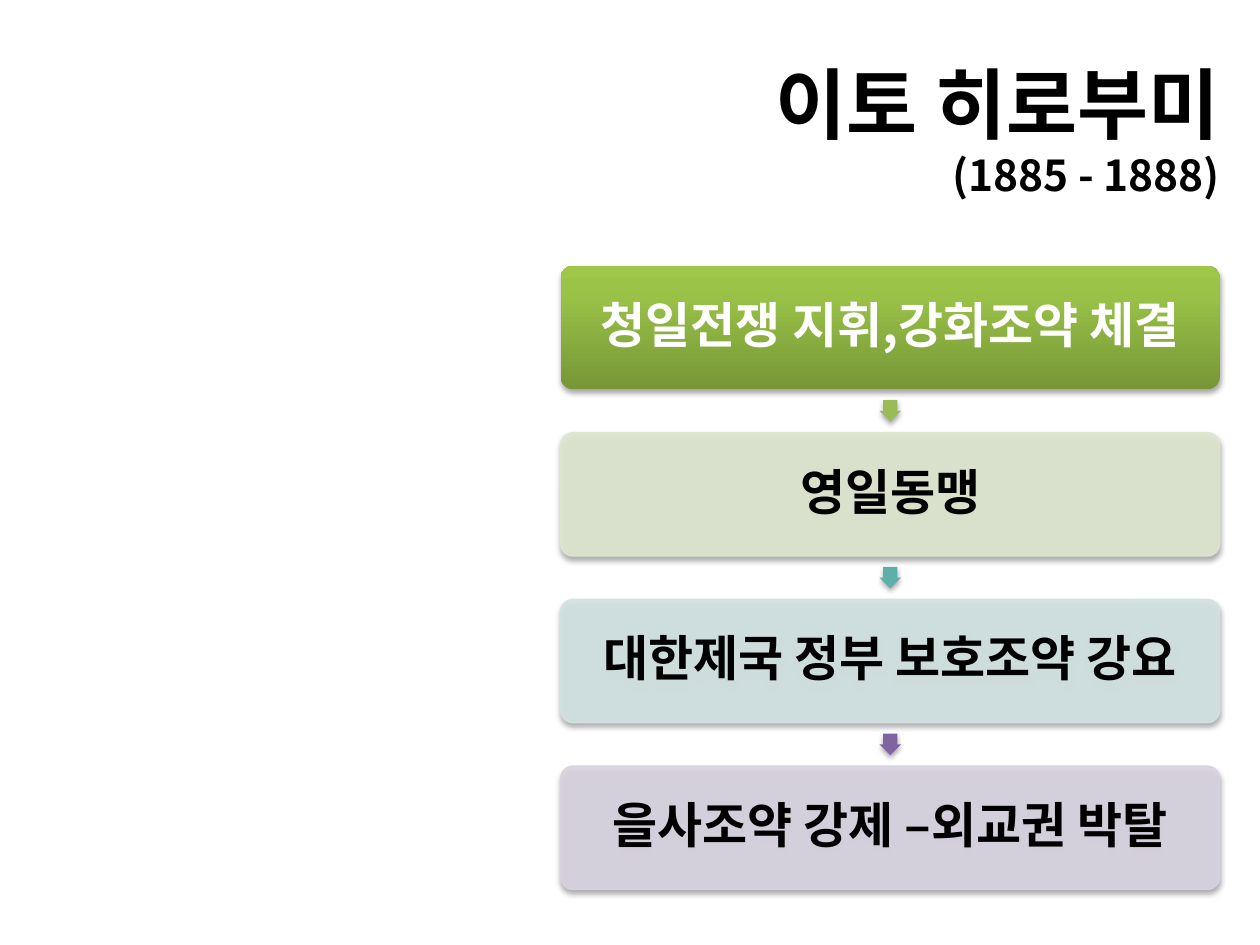
import pptx
import pptx.util
import pptx.oxml
import pptx.dml.color
import pptx.enum.shapes
import pptx.enum.text
from copy import deepcopy
from lxml import etree
from pptx.oxml.ns import qn
from pptx.util import Inches, Pt

COLORS = {
    "black": "000000", "white": "FFFFFF",
    "green_dark": "779737", "green_mid": "9BC348", "green_light": "9DC746",
    "olive": "DEE7D1", "teal": "D2E3E2", "purple": "D8D3E0",
    "arrow_green": "9BBB59", "arrow_teal": "5EAFA6", "arrow_purple": "8064A2",
}
SHAPES = pptx.enum.shapes.MSO_SHAPE
ALIGN = pptx.enum.text.PP_ALIGN


def rgb(name):
    return pptx.dml.color.RGBColor.from_string(COLORS[name])


class FlowSlide:
    font_name = "Noto Sans CJK KR"

    def __init__(self, page):
        self.page = page

    def set_font(self, font, size, color):
        font.size, font.bold = Pt(size), True
        font.color.rgb = rgb(color)
        font.name = self.font_name
        # Korean glyphs take the East Asian typeface
        latin = font._element.find(qn("a:latin"))
        east = etree.Element(qn("a:ea"), typeface=self.font_name)
        latin.addnext(east)

    def set_alpha(self, element, percent):
        for color in element.iter(qn("a:srgbClr")):
            etree.SubElement(color, qn("a:alpha"), val=str(percent * 1000))

    def add_shadow(self, shape):
        shape.shadow.inherit = False
        effects = shape._element.spPr.find(qn("a:effectLst"))
        shadow = etree.SubElement(
            effects, qn("a:outerShdw"), blurRad=str(Pt(3.1)), dist=str(Pt(1.8)),
            dir="5400000", rotWithShape="0")
        etree.SubElement(shadow, qn("a:srgbClr"), val=COLORS["black"])
        self.set_alpha(shadow, 35)

    def title(self, name, years, left, top, width, height):
        title = self.page.shapes.title
        title.left, title.top = Inches(left), Inches(top)
        title.width, title.height = Inches(width), Inches(height)
        frame = title.text_frame
        frame.word_wrap = True
        frame.auto_size = pptx.enum.text.MSO_AUTO_SIZE.NONE
        frame.vertical_anchor = pptx.enum.text.MSO_ANCHOR.MIDDLE
        para = frame.paragraphs[0]
        para.alignment = ALIGN.RIGHT
        span = para.add_run()
        span.text = name
        self.set_font(span.font, 44.1, "black")
        para.add_line_break()
        span = para.add_run()
        span.text = years
        self.set_font(span.font, 24.3, "black")

    def box(self, text, fill, color, left, top, width, height):
        box = self.page.shapes.add_shape(
            SHAPES.ROUNDED_RECTANGLE,
            Inches(left), Inches(top), Inches(width), Inches(height))
        box.adjustments[0] = 0.1
        if isinstance(fill, str):
            box.fill.solid()
            box.fill.fore_color.rgb = rgb(fill)
            box.line.color.rgb = rgb(fill)
            box.line.width = Pt(0.75)
            self.set_alpha(box._element.spPr, 90)
        else:
            self.gradient(box, fill)
            box.line.fill.background()
        self.add_shadow(box)

        frame = box.text_frame
        frame.word_wrap = True
        frame.vertical_anchor = pptx.enum.text.MSO_ANCHOR.MIDDLE
        frame.margin_left = frame.margin_right = Inches(0.04)
        frame.margin_top = frame.margin_bottom = Inches(0.04)
        para = frame.paragraphs[0]
        para.text = text
        para.alignment = ALIGN.CENTER
        para.line_spacing = 0.9
        para.space_after = Pt(9.8)
        self.set_font(para.font, 28, color)

    def gradient(self, shape, stops):
        shape.fill.gradient()
        shape.fill.gradient_angle = 90
        first = shape._element.spPr.find(".//" + qn("a:gs"))
        first.addnext(deepcopy(first))
        for stop, (position, color) in zip(shape.fill.gradient_stops, stops):
            stop.position = position
            stop.color.rgb = rgb(color)

    def arrow(self, color, left, top, size):
        arrow = self.page.shapes.add_shape(
            SHAPES.RIGHT_ARROW,
            Inches(left), Inches(top), Inches(size), Inches(size))
        arrow.rotation = 90
        arrow.adjustments[0], arrow.adjustments[1] = 0.667, 0.5
        arrow.fill.solid()
        arrow.fill.fore_color.rgb = rgb(color)
        arrow.line.fill.background()
        self.add_shadow(arrow)


def main():
    deck = pptx.Presentation()
    deck.slide_width, deck.slide_height = Inches(10), Inches(7.5)
    slide = FlowSlide(deck.slides.add_slide(deck.slide_layouts[5]))

    # Name and years in office
    slide.title("이토 히로부미", " (1885 - 1888)", 0.78, 0.39, 9, 1.25)

    # Steps, each followed by an arrow to the next
    green = [(0, "green_dark"), (0.8, "green_mid"), (1, "green_light")]
    steps = [
        ("청일전쟁 지휘,강화조약 체결", green, "white", "arrow_green"),
        ("영일동맹", "olive", "black", "arrow_teal"),
        ("대한제국 정부 보호조약 강요", "teal", "black", "arrow_purple"),
        ("을사조약 강제 –외교권 박탈", "purple", "black", None),
    ]
    left, first_top, last_top, width, height = 4.45, 2.11, 6.08, 5.23, 0.98
    pitch = (last_top - first_top) / (len(steps) - 1)
    arrow_size = 0.17
    for index, (text, fill, color, arrow_color) in enumerate(steps):
        top = first_top + index * pitch
        slide.box(text, fill, color, left, top, width, height)
        if arrow_color:
            gap_middle = top + (height + pitch) / 2
            slide.arrow(arrow_color, left + (width - arrow_size) / 2,
                        gap_middle - arrow_size / 2, arrow_size)

    deck.save("out.pptx")


if __name__ == "__main__":
    main()
